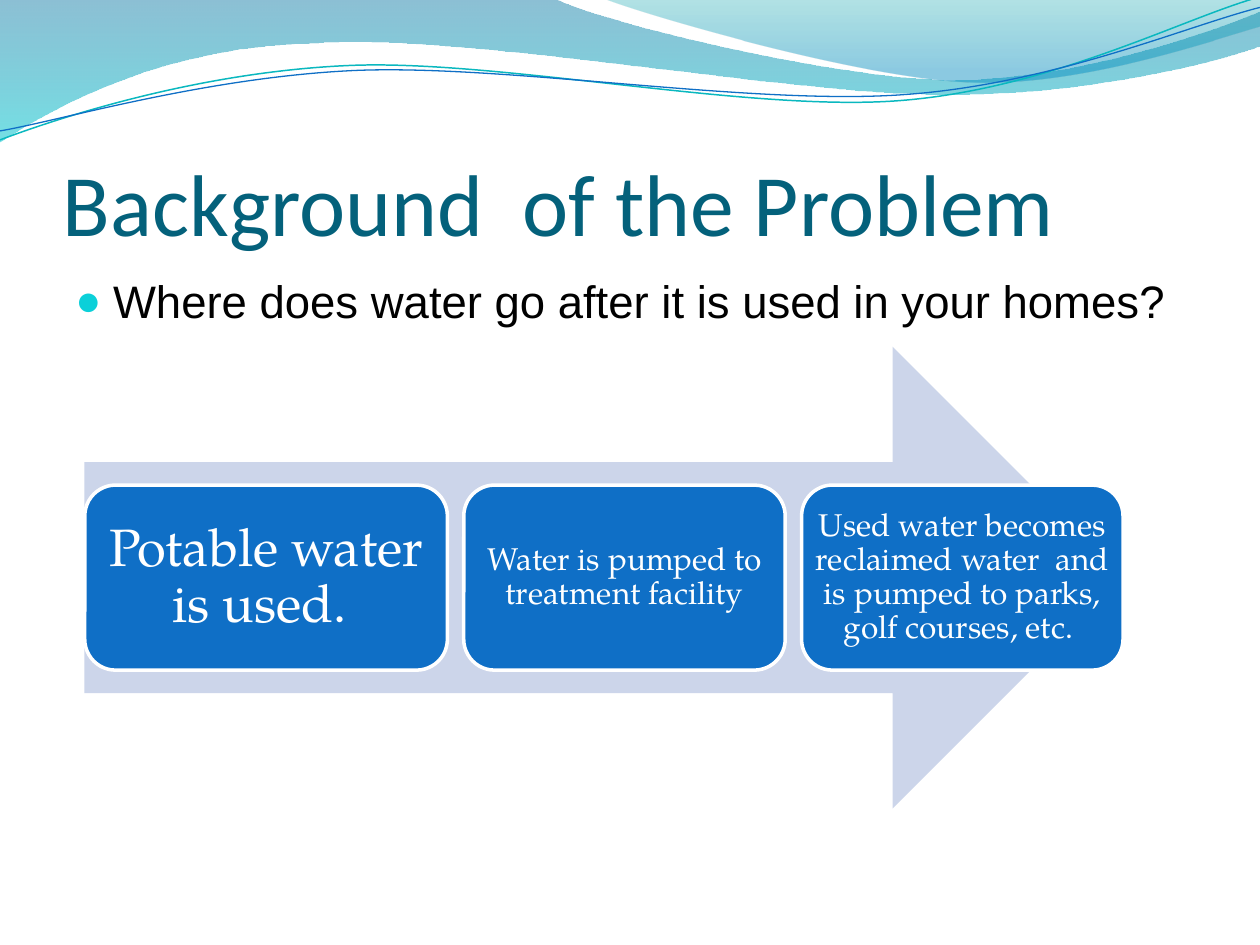
import math

import pptx
import pptx.util
import pptx.dml.color
import pptx.enum.shapes
import pptx.enum.text
import pptx.oxml
import pptx.oxml.ns

Cm, Pt = pptx.util.Cm, pptx.util.Pt
SHAPE = pptx.enum.shapes.MSO_SHAPE
ALIGN = pptx.enum.text.PP_ALIGN
ANCHOR = pptx.enum.text.MSO_ANCHOR
qn = pptx.oxml.ns.qn
NS = pptx.oxml.ns.nsdecls("a")

COLORS = {
    "title": "04617B", "body": "000000", "bullet": "0BD0D9",
    "arrow": "CCD5EA", "step": "0F6FC6", "white": "FFFFFF",
    "teal line": "0AB8BF", "blue line": "0F6FC6",
    "deep blue": "0074A1", "cyan": "00C6CF", "teal": "00A1A9", "sky": "008BBF",
}
TITLE = "Background  of the Problem"
QUESTION = "Where does water go after it is used in your homes?"
# text, width in cm, font size, extra inset in cm
STEPS = [
    ("Potable water is used. ", 7.31, 30, 0.13),
    ("Water is pumped to treatment facility", 6.48, 18, 0),
    ("Used water becomes reclaimed water  and is pumped to parks, golf courses, etc. ", 6.48, 18, 0),
]
STEP_LEFT, STEP_TOP, STEP_HEIGHT, STEP_GAP = 1.71, 9.78, 3.73, 0.33

# Outlines in cm: a start point, then segments of one point (line) or three (Bézier curve)
# Gradient stops: position, colour, opacity in percent
BANDS = [
    {"start": (0, 0),
     "segments": [
         [(11.18, -0.03)],
         [(12.09, 0.43), (16.87, 1.6), (19.25, 1.6)],
         [(21.67, 1.6), (24.33, 0.66), (25.4, 0.23)],
         [(25.43, 0.91)],
         [(24.97, 1.12), (22.1, 1.93), (18.95, 1.9)],
         [(15.8, 1.9), (9.7, 0.71), (6.53, 0.86)],
         [(3.28, 0.91), (1.17, 2.11), (-0.03, 2.87)]],
     "stops": [(0, "deep blue", 45), (1, "cyan", 55)]},
    {"start": (12.17, -0.03),
     "segments": [
         [(12.93, 0.28), (17.32, 1.57), (19.53, 1.65)],
         [(21.74, 1.75), (24.41, 0.81), (25.4, 0.53)],
         [(25.4, 0)]],
     "stops": [(0, "teal", 30), (0.8, "sky", 45)]},
]
# The ripples turn about a centre
RIPPLES = [
    {"start": (0, 2.82),
     "segments": [
         [(1.22, 2.36), (4.01, 1.45), (7.04, 1.32)],
         [(10.03, 1.19), (15.06, 2.26), (18.11, 2.03)],
         [(21.16, 1.8), (23.83, 0.38), (25.35, -0.05)]],
     "line": ("teal line", 0.85), "center": (12.67, 1.46), "tilt": -2.7},
    {"start": (0, 2.64),
     "segments": [
         [(1.19, 2.44), (4.17, 1.55), (7.19, 1.42)],
         [(10.24, 1.3), (15.16, 2.13), (18.21, 1.91)],
         [(21.23, 1.7), (23.9, 0.53), (25.4, 0.15)]],
     "line": ("blue line", 0.75), "center": (12.69, 1.5), "tilt": -2.7},
]


def rgb(name):
    return pptx.dml.color.RGBColor.from_string(COLORS[name])


def turn(point, center, degrees):
    cos, sin = math.cos(math.radians(degrees)), math.sin(math.radians(degrees))
    dx, dy = point[0] - center[0], point[1] - center[1]
    return center[0] + dx * cos - dy * sin, center[1] + dx * sin + dy * cos


def bend(outline, segments):
    """Join the three points of each curved segment into one Bézier command."""
    lines = iter(list(outline._element.iter(qn("a:lnTo"))))
    for segment in segments:
        commands = [next(lines) for _ in segment]
        if len(segment) == 3:
            curve = pptx.oxml.parse_xml(f"<a:cubicBezTo {NS}/>")
            commands[0].addprevious(curve)
            for command in commands:
                curve.append(command[0])
                command.getparent().remove(command)


def add_outline(slide, start, segments, stops=None, line=None, center=(0, 0), tilt=0):
    points = [start, *(point for segment in segments for point in segment)]
    level = [turn(point, center, -tilt) for point in points]
    (first, *rest) = [(Cm(x), Cm(y)) for x, y in level]
    builder = slide.shapes.build_freeform(*first)
    builder.add_line_segments(rest, close=stops is not None)
    outline = builder.convert_to_shape()
    bend(outline, segments)
    outline.rotation = tilt
    outline.shadow.inherit = False
    if line:
        outline.fill.background()
        outline.line.color.rgb = rgb(line[0])
        outline.line.width = Pt(line[1])
        return
    outline.line.fill.background()
    outline.fill.gradient()
    outline.fill.gradient_angle = 270
    for stop, (position, color, _) in zip(outline.fill.gradient_stops, stops):
        stop.position = position
        stop.color.rgb = rgb(color)
    for tone, (_, _, opacity) in zip(outline._element.spPr.iter(qn("a:srgbClr")), stops):
        tone.append(pptx.oxml.parse_xml(f'<a:alpha {NS} val="{opacity * 1000}"/>'))


def add_block(slide, preset, left, top, width, height, fill, line=None):
    block = slide.shapes.add_shape(preset, Cm(left), Cm(top), Cm(width), Cm(height))
    block.shadow.inherit = False
    block.fill.solid()
    block.fill.fore_color.rgb = rgb(fill)
    if line:
        block.line.color.rgb = rgb(line)
        block.line.width = Pt(2)
    else:
        block.line.fill.background()
    return block


def write(shape, text, *, font, size, color, insets, anchor=ANCHOR.TOP,
          align=ALIGN.LEFT, line_spacing=1.0, before=0):
    frame = shape.text_frame
    frame.word_wrap = True
    frame.vertical_anchor = anchor
    frame.margin_left, frame.margin_top, frame.margin_right, frame.margin_bottom = map(Cm, insets)
    paragraph = frame.paragraphs[0]
    paragraph.alignment = align
    paragraph.line_spacing = line_spacing
    paragraph.space_before = Pt(before)
    run = paragraph.add_run()
    run.text = text
    run.font.name, run.font.size = font, Pt(size)
    run.font.color.rgb = rgb(color)
    return paragraph


def add_bullet(paragraph, color, percent, indent):
    properties = paragraph._p.get_or_add_pPr()
    properties.set("marL", str(Cm(indent)))
    properties.set("indent", str(-Cm(indent)))
    for xml in (f'<a:buClr {NS}><a:srgbClr val="{COLORS[color]}"/></a:buClr>',
                f'<a:buSzPct {NS} val="{percent * 1000}"/>',
                f'<a:buFont {NS} typeface="Arial"/>',
                f'<a:buChar {NS} char="●"/>'):
        properties.append(pptx.oxml.parse_xml(xml))


def main():
    deck = pptx.Presentation()
    deck.slide_width, deck.slide_height = Cm(25.4), Cm(19.05)
    slide = deck.slides.add_slide(deck.slide_layouts[6])

    for outline in BANDS + RIPPLES:
        add_outline(slide, **outline)

    title = slide.shapes.add_textbox(Cm(1.27), Cm(1.95), Cm(22.86), Cm(3.17))
    write(title, TITLE, font="Calibri", size=50, color="title",
          insets=(0, 0.13, 0, 0), anchor=ANCHOR.BOTTOM)

    body = slide.shapes.add_textbox(Cm(1.27), Cm(5.38), Cm(22.86), Cm(12.19))
    question = write(body, QUESTION, font="Arial", size=26, color="body",
                     insets=(0.25, 0.13, 0.25, 0.13), before=5.2)
    add_bullet(question, "bullet", 95, 0.76)

    add_block(slide, SHAPE.RIGHT_ARROW, 1.7, 6.99, 20.95, 9.31, "arrow")
    left = STEP_LEFT
    for text, width, size, inset in STEPS:
        step = add_block(slide, SHAPE.ROUNDED_RECTANGLE, left, STEP_TOP, width, STEP_HEIGHT,
                         "step", line="white")
        write(step, text, font="TeX Gyre Pagella", size=size, color="white",
              insets=(inset,) * 4, anchor=ANCHOR.MIDDLE, align=ALIGN.CENTER, line_spacing=0.9)
        left += width + STEP_GAP

    deck.save("out.pptx")


if __name__ == "__main__":
    main()
